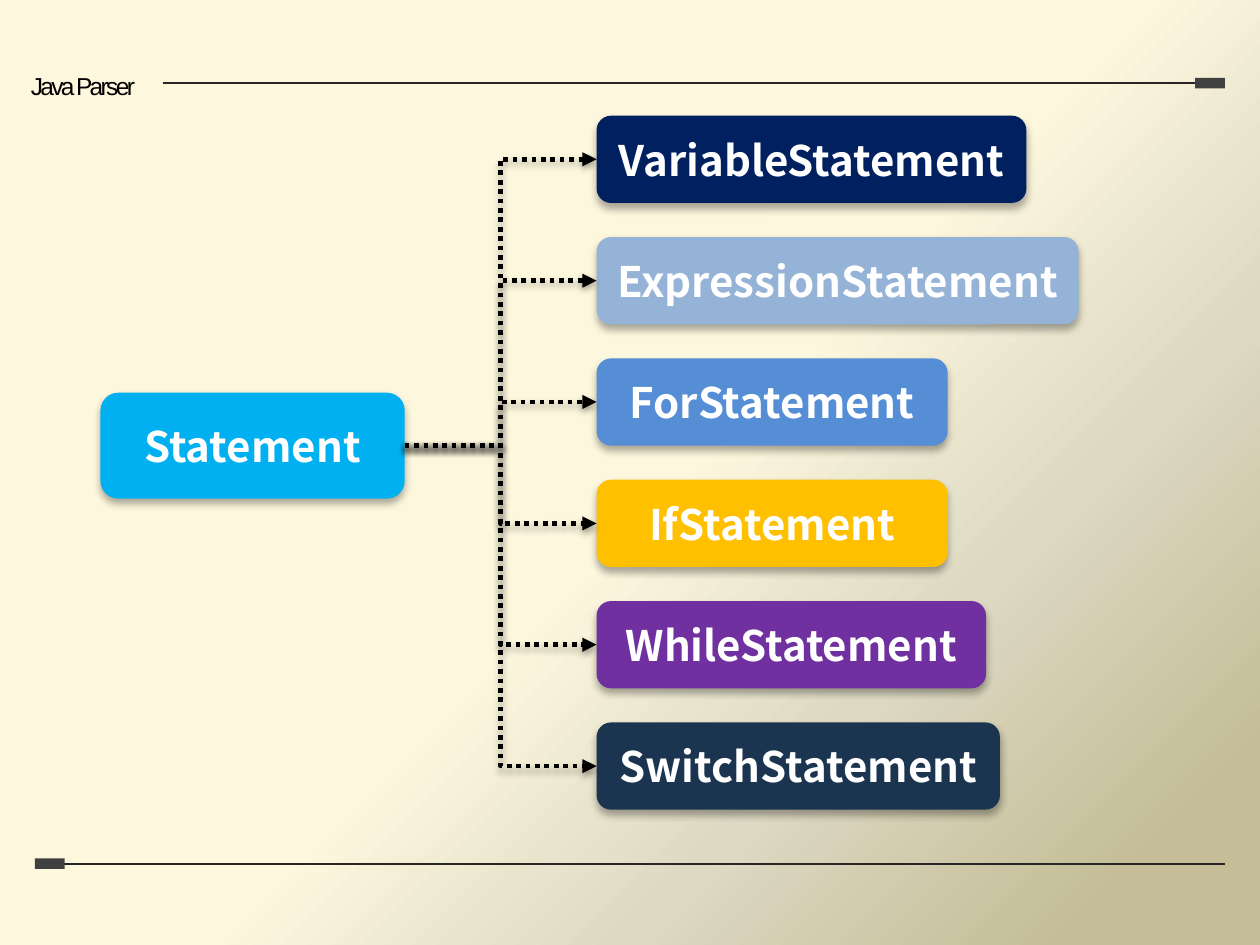
from dataclasses import dataclass

from lxml.etree import SubElement
from pptx import Presentation
from pptx.dml.color import RGBColor
from pptx.enum.dml import MSO_LINE
from pptx.enum.shapes import MSO_CONNECTOR as Link, MSO_SHAPE as Preset
from pptx.enum.text import MSO_ANCHOR as Anchor, MSO_AUTO_SIZE as AutoSize, PP_ALIGN as Align
from pptx.oxml.ns import qn
from pptx.shapes.autoshape import Shape
from pptx.shapes.connector import Connector
from pptx.slide import Slide
from pptx.text.text import TextFrame
from pptx.util import Cm, Pt


@dataclass(frozen=True)
class Shadow:
    opacity: int
    blur: float
    distance: float


@dataclass(frozen=True)
class Theme:
    ink: str = "000000"
    rule: str = "262626"
    tab: str = "404040"
    label: str = "FFFFFF"
    title_font: str = "Arial"
    label_font: str = "Noto Sans CJK KR"
    title_size: float = 10.5
    label_size: float = 18
    title_spacing: int = -110
    backdrop: tuple[tuple[int, str], ...] = ((52, "FCF7DD"), (71, "DDD9C3"), (91, "C4BD97"))
    box_shadow: Shadow = Shadow(32, 3.5, 2.2)
    arrow_shadow: Shadow = Shadow(38, 3.15, 1.57)


@dataclass(frozen=True)
class Node:
    text: str
    color: str
    left: float
    top: float
    width: float
    height: float


@dataclass(frozen=True)
class Rule:
    start: float
    end: float
    y: float
    tab_left: float


THEME = Theme()
TAB_WIDTH, TAB_HEIGHT = 0.45, 0.16
BRANCH_LEFT, BRANCH_TOP, BRANCH_HEIGHT, BRANCH_PITCH = 9.02, 1.75, 1.32, 1.835

RULES = [
    Rule(0.53, 18.52, 13.06, 0.53),
    Rule(2.46, 18.52, 1.26, 18.52 - TAB_WIDTH),
]
ROOT = Node("Statement", "00B0F0", 1.52, 5.94, 4.6, 1.6)
BRANCHES = [
    Node(text, color, BRANCH_LEFT, BRANCH_TOP + row * BRANCH_PITCH, width, BRANCH_HEIGHT)
    for row, (text, color, width) in enumerate([
        ("VariableStatement", "002060", 6.5),
        ("ExpressionStatement", "95B3D7", 7.29),
        ("ForStatement", "558ED5", 5.31),
        ("IfStatement", "FFC000", 5.31),
        ("WhileStatement", "7030A0", 5.89),
        ("SwitchStatement", "1B3551", 6.1),
    ])
]


def paint_backdrop(slide: Slide) -> None:
    fill = slide.background.fill
    fill.gradient()
    gradient = slide.background._cSld.bg.bgPr.find(qn("a:gradFill"))
    for part in list(gradient):
        gradient.remove(part)
    stops = SubElement(gradient, qn("a:gsLst"))
    for position, color in THEME.backdrop:
        stop = SubElement(stops, qn("a:gs"), pos=str(position * 1000))
        SubElement(stop, qn("a:srgbClr"), val=color)
    spread = SubElement(gradient, qn("a:path"), path="circle")
    SubElement(spread, qn("a:fillToRect"), r="100000", b="100000")


def add_effects(part: Shape | Connector, shadow: Shadow | None = None) -> None:
    effects = SubElement(part._element.spPr, qn("a:effectLst"))
    if shadow is None:
        return
    outer = SubElement(
        effects, qn("a:outerShdw"), blurRad=str(Pt(shadow.blur)),
        dist=str(Pt(shadow.distance)), dir="5400000", rotWithShape="0",
    )
    tint = SubElement(outer, qn("a:srgbClr"), val=THEME.ink)
    SubElement(tint, qn("a:alpha"), val=str(shadow.opacity * 1000))


def write(frame: TextFrame, text: str, font: str, size: float, color: str, bold: bool) -> None:
    frame.word_wrap = False
    frame.vertical_anchor = Anchor.MIDDLE
    paragraph = frame.paragraphs[0]
    paragraph.alignment = Align.CENTER
    run = paragraph.add_run()
    run.text = text
    run.font.name, run.font.size, run.font.bold = font, Pt(size), bold
    run.font.color.rgb = RGBColor.from_string(color)


def add_title(slide: Slide, text: str) -> None:
    title = slide.shapes.title
    title.left, title.top, title.width, title.height = Cm(-1.07), Cm(0.94), Cm(4.65), Cm(0.71)
    write(title.text_frame, text, THEME.title_font, THEME.title_size, THEME.ink, False)
    title.text_frame.auto_size = AutoSize.SHAPE_TO_FIT_TEXT
    run = title.text_frame.paragraphs[0].runs[0]
    run.font._element.set("spc", str(THEME.title_spacing))


def add_block(slide: Slide, preset: Preset, color: str, left: float, top: float,
              width: float, height: float, shadow: Shadow | None = None) -> Shape:
    block = slide.shapes.add_shape(preset, Cm(left), Cm(top), Cm(width), Cm(height))
    block.fill.solid()
    block.fill.fore_color.rgb = RGBColor.from_string(color)
    block.line.fill.background()
    add_effects(block, shadow)
    return block


def add_rule(slide: Slide, rule: Rule) -> None:
    line = slide.shapes.add_connector(
        Link.STRAIGHT, Cm(rule.start), Cm(rule.y), Cm(rule.end), Cm(rule.y))
    line.line.color.rgb = RGBColor.from_string(THEME.rule)
    line.line.width = Pt(0.75)
    add_effects(line)
    add_block(slide, Preset.RECTANGLE, THEME.tab, rule.tab_left,
              rule.y - TAB_HEIGHT / 2, TAB_WIDTH, TAB_HEIGHT)


def add_node(slide: Slide, node: Node) -> Shape:
    box = add_block(slide, Preset.ROUNDED_RECTANGLE, node.color, node.left, node.top,
                    node.width, node.height, THEME.box_shadow)
    write(box.text_frame, node.text, THEME.label_font, THEME.label_size, THEME.label, True)
    return box


def add_arrow(slide: Slide, parent: Shape, child: Shape) -> None:
    right_site, left_site = 3, 1
    arrow = slide.shapes.add_connector(Link.ELBOW, 0, 0, 0, 0)
    arrow.begin_connect(parent, right_site)
    arrow.end_connect(child, left_site)
    arrow.line.color.rgb = RGBColor.from_string(THEME.ink)
    arrow.line.width = Pt(2)
    arrow.line.dash_style = MSO_LINE.ROUND_DOT
    line_xml = arrow._element.spPr.find(qn("a:ln"))
    line_xml.find(qn("a:prstDash")).set("val", "sysDot")
    SubElement(line_xml, qn("a:tailEnd"), type="triangle")
    add_effects(arrow, THEME.arrow_shadow)


def main() -> None:
    deck = Presentation()
    deck.slide_width, deck.slide_height = Cm(19.05), Cm(14.29)
    title_only = deck.slide_layouts[5]
    slide = deck.slides.add_slide(title_only)
    paint_backdrop(slide)
    for rule in RULES:
        add_rule(slide, rule)
    add_title(slide, "Java Parser")
    statement = add_node(slide, ROOT)
    kinds = [add_node(slide, branch) for branch in BRANCHES]
    for kind in kinds:
        add_arrow(slide, statement, kind)
    deck.save("out.pptx")


if __name__ == "__main__":
    main()
